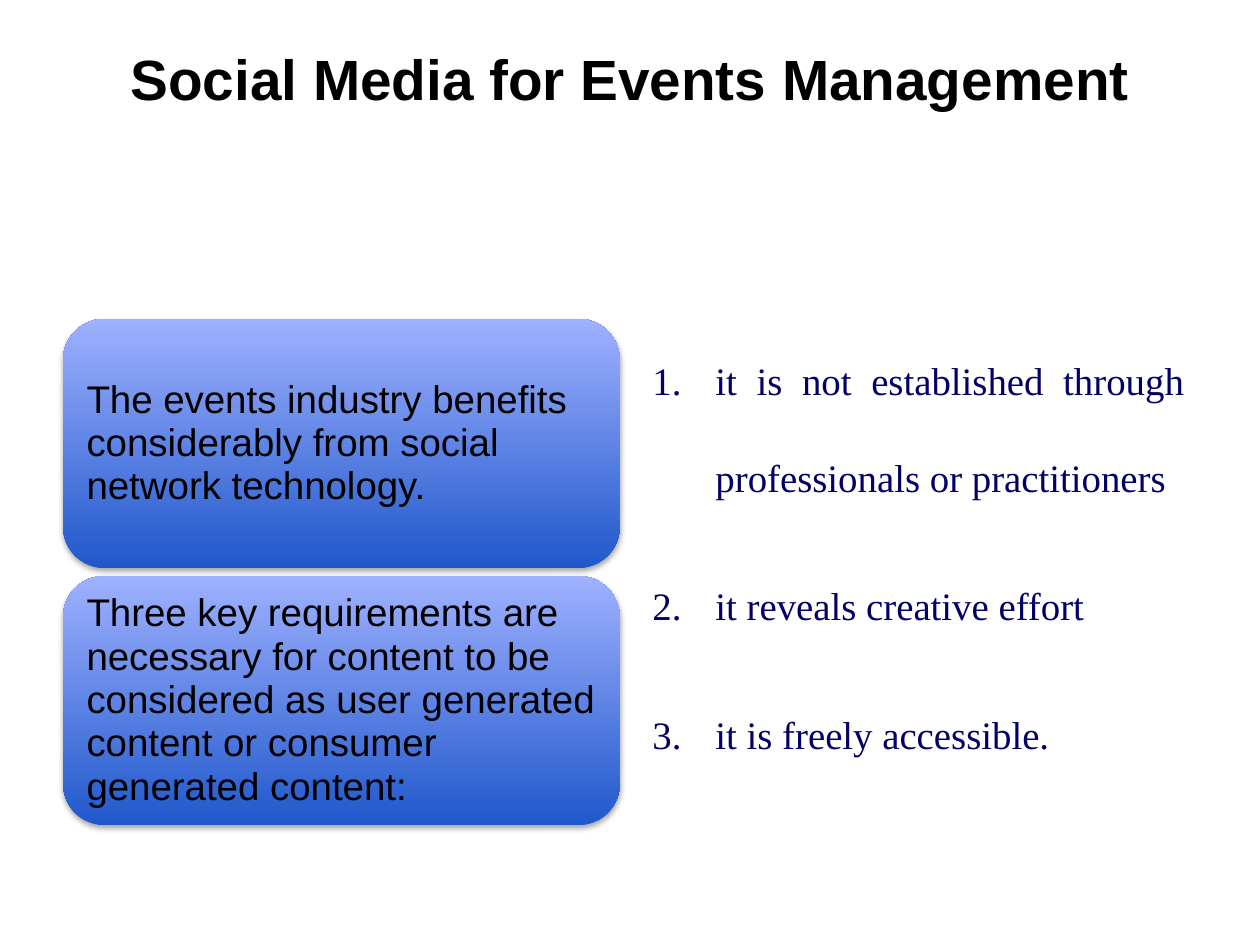
from dataclasses import dataclass

from lxml import etree
from pptx import Presentation
from pptx import util as u
from pptx.dml.color import RGBColor
from pptx.enum import shapes, text
from pptx.oxml.ns import qn

WIDTH, HEIGHT = u.Inches(10), u.Inches(7.5)
MARGIN = 0.5
COLUMN_WIDTH = 4.42
COLUMN_STEP = 4.58
ROW_TOP, ROW_HEIGHT, ROW_STEP = 2.53, 1.98, 2.04

BLACK, NAVY = "000000", "000066"
GRADIENT = ("2058CB", "9FB1FF")  # bottom to top


@dataclass
class Style:
    font: str
    size: float
    color: str
    align: text.PP_ALIGN
    spacing: float = 1.0
    bold: bool = False


TITLE = Style("Arial", 32.4, BLACK, text.PP_ALIGN.CENTER, bold=True)
CARD = Style("Arial", 22, BLACK, text.PP_ALIGN.LEFT, spacing=0.94)
LIST = Style("Times New Roman", 22.2, NAVY, text.PP_ALIGN.JUSTIFY, spacing=2.08)

STATEMENTS = [
    "The events industry benefits considerably from social network technology.",
    "Three key requirements are necessary for content to be considered as "
    "user generated content or consumer generated content:",
]
REQUIREMENTS = [
    "it is not established through professionals or practitioners",
    "it reveals creative effort",
    "it is freely accessible.",
]


def rgb(color: str) -> RGBColor:
    return RGBColor.from_string(color)


def write(frame, lines: list[str], style: Style) -> None:
    """Fill a text frame with one styled paragraph per line."""
    frame.word_wrap = True
    for index, line in enumerate(lines):
        paragraph = frame.add_paragraph() if index else frame.paragraphs[0]
        paragraph.text = line
        paragraph.alignment = style.align
        paragraph.line_spacing = style.spacing
        paragraph.font.name = style.font
        paragraph.font.size = u.Pt(style.size)
        paragraph.font.bold = style.bold
        paragraph.font.color.rgb = rgb(style.color)


def add_text(slide, left: float, top: float, width: float, height: float,
             lines: list[str], style: Style):
    box = slide.shapes.add_textbox(*map(u.Inches, (left, top, width, height)))
    write(box.text_frame, lines, style)
    return box.text_frame


def number(paragraph) -> None:
    """Turn a paragraph into a numbered item with a hanging indent."""
    paragraph.space_before, paragraph.space_after = u.Pt(6), u.Pt(12)
    properties = paragraph._p.get_or_add_pPr()
    properties.set("marL", str(u.Inches(0.5)))
    properties.set("indent", str(u.Inches(-0.5)))
    bullet = etree.Element(qn("a:buAutoNum"), type="arabicPeriod")
    properties.find(qn("a:spcAft")).addnext(bullet)


def add_shadow(shape) -> None:
    shape.shadow.inherit = False
    effects = shape._element.spPr.find(qn("a:effectLst"))
    shadow = etree.SubElement(
        effects, qn("a:outerShdw"), blurRad=str(u.Pt(3.1)),
        dist=str(u.Pt(1.8)), dir="5400000", rotWithShape="0")
    color = etree.SubElement(shadow, qn("a:srgbClr"), val=BLACK)
    etree.SubElement(color, qn("a:alpha"), val="35000")


def add_card(slide, row: int, statement: str) -> None:
    shape = slide.shapes.add_shape(
        shapes.MSO_SHAPE.ROUNDED_RECTANGLE,
        *map(u.Inches, (MARGIN, ROW_TOP + row * ROW_STEP, COLUMN_WIDTH, ROW_HEIGHT)))
    shape.fill.gradient()
    shape.fill.gradient_angle = 90
    for stop, color in zip(shape.fill.gradient_stops, GRADIENT):
        stop.color.rgb = rgb(color)
    shape.line.fill.background()
    add_shadow(shape)
    frame = shape.text_frame
    frame.margin_left = frame.margin_right = u.Inches(0.09)
    frame.margin_top = frame.margin_bottom = u.Inches(0.09)
    frame.vertical_anchor = text.MSO_ANCHOR.MIDDLE
    write(frame, [statement], CARD)


def main() -> None:
    presentation = Presentation()
    presentation.slide_width, presentation.slide_height = WIDTH, HEIGHT
    slide = presentation.slides.add_slide(presentation.slide_layouts[6])

    # Title
    add_text(slide, MARGIN, 0.3, 9, 1.25, ["Social Media for Events Management"], TITLE)

    # Numbered requirements, right column
    frame = add_text(slide, MARGIN + COLUMN_STEP, 2.38, COLUMN_WIDTH, 4.32,
                     REQUIREMENTS, LIST)
    for paragraph in frame.paragraphs:
        number(paragraph)

    # Statement cards, left column
    for row, statement in enumerate(STATEMENTS):
        add_card(slide, row, statement)

    presentation.save("out.pptx")


if __name__ == "__main__":
    main()
